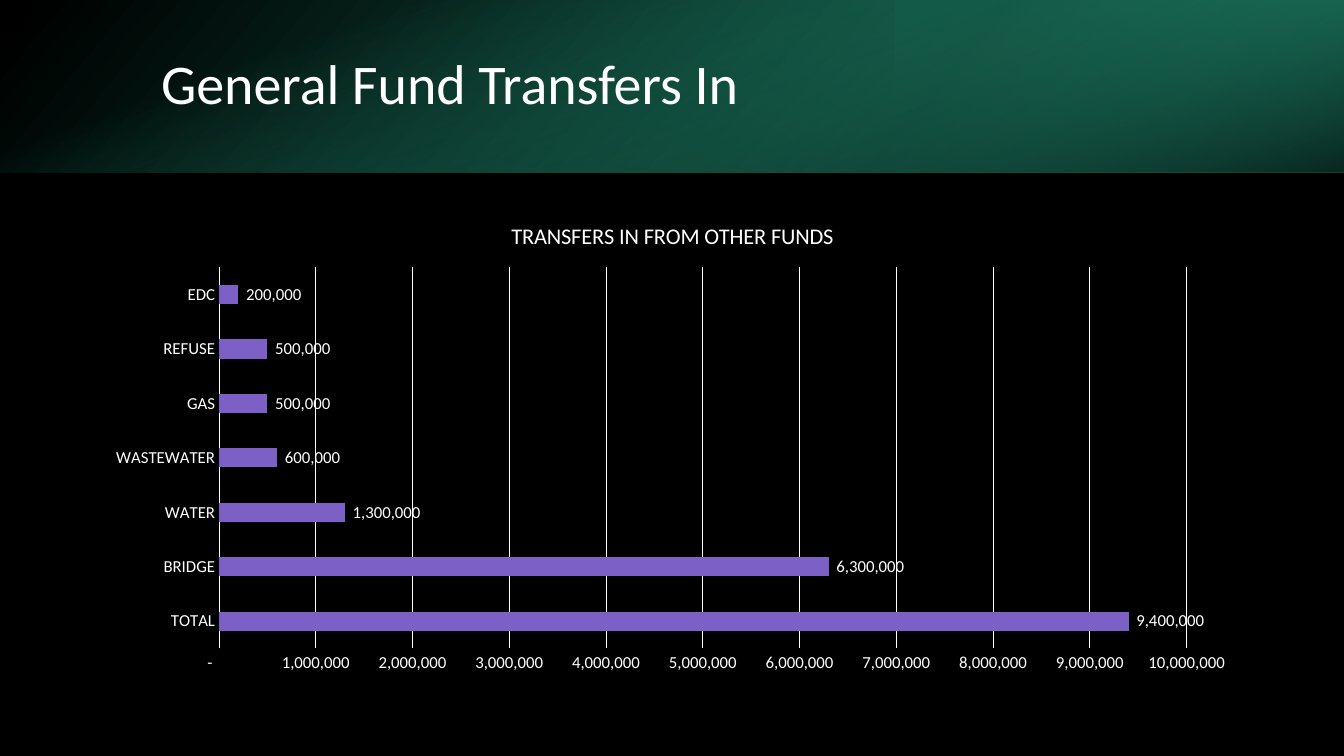
from dataclasses import dataclass

from lxml.etree import SubElement
from pptx import Presentation
from pptx.chart.data import CategoryChartData
from pptx.dml.color import RGBColor
from pptx.enum.chart import XL_CHART_TYPE, XL_LABEL_POSITION, XL_TICK_MARK
from pptx.enum.shapes import MSO_SHAPE
from pptx.enum.text import MSO_ANCHOR, PP_ALIGN
from pptx.oxml.ns import qn
from pptx.util import Emu, Pt


@dataclass(frozen=True)
class Theme:
    font: str = "Calibri"
    back: str = "000000"
    text: str = "FFFFFF"
    bar: str = "7C60C6"
    deep: str = "1F8369"
    dark: str = "155746"
    mint: str = "29AF8C"
    head: int = 40
    sub: int = 16
    note: int = 12
    rule: float = 0.75


THEME = Theme()
WIDE, HIGH = 1344, 756
SCALE = 12192000 / WIDE
NUMBER = '_(* #,##0_);_(* \\(#,##0\\);_(* "-"??_);_('
FUNDS = {
    "TOTAL": 9400000,
    "BRIDGE": 6300000,
    "WATER": 1300000,
    "WASTEWATER": 600000,
    "GAS": 500000,
    "REFUSE": 500000,
    "EDC": 200000,
}


def px(count):
    return Emu(round(count * SCALE))


def rgb(code):
    return RGBColor.from_string(code)


def style(font, size, color=THEME.text):
    font.name = THEME.font
    font.size = Pt(size)
    font.bold = False
    font.color.rgb = rgb(color)


def write(frame, text, size, color=THEME.text, align=None, space=None):
    line = frame.paragraphs[0]
    line.alignment = align
    line.line_spacing = space
    run = line.add_run()
    run.text = text
    style(run.font, size, color)


def rule(line):
    line.color.rgb = rgb(THEME.text)
    line.width = Pt(THEME.rule)


def shade(slide, box, stops, angle, turn=0, flip=False):
    """Add a gradient panel; each stop is (place, color, opacity) in percent."""
    x, y, w, h = box
    if turn == 90:
        x, y, w, h = x + (w - h) / 2, y + (h - w) / 2, h, w
    panel = slide.shapes.add_shape(MSO_SHAPE.RECTANGLE, px(x), px(y), px(w), px(h))
    panel.rotation = turn
    panel.shadow.inherit = False
    panel.line.fill.background()
    props = panel.element.spPr
    if flip:
        props.find(qn("a:xfrm")).set("flipH", "1")
    fill = SubElement(props, qn("a:gradFill"), rotWithShape="1")
    props.find(qn("a:prstGeom")).addnext(fill)
    group = SubElement(fill, qn("a:gsLst"))
    for place, color, alpha in stops:
        stop = SubElement(group, qn("a:gs"), pos=str(place * 1000))
        tint = SubElement(stop, qn("a:srgbClr"), val=color)
        SubElement(tint, qn("a:alpha"), val=str(alpha * 1000))
    SubElement(fill, qn("a:lin"), ang=str(angle * 60000), scaled="0")


def header(slide, box):
    x, y, w, h = box
    # Layered gradients
    shade(slide, box, [(0, THEME.back, 96), (100, THEME.deep, 100)], 140, flip=True)
    third = w // 3
    shade(slide, (x + w - third, y, third, h),
          [(19, THEME.dark, 68), (100, THEME.mint, 79)], 320, turn=180, flip=True)
    shade(slide, box, [(23, THEME.mint, 0), (99, THEME.back, 74)], 340, turn=90)

    # Title, raised above the gradients
    title = slide.shapes.title
    title.left, title.top = px(x + 151), px(y + 38)
    title.width, title.height = px(1107), px(97)
    title.text_frame.vertical_anchor = MSO_ANCHOR.MIDDLE
    title.text_frame.word_wrap = True
    write(title.text_frame, "General Fund Transfers In", THEME.head,
          align=PP_ALIGN.LEFT, space=0.9)
    slide.shapes.element.append(title.element)


def graph(slide, box):
    data = CategoryChartData(number_format="#,##0")
    data.categories = list(FUNDS)
    data.add_series("Series 1", list(FUNDS.values()))
    chart = slide.shapes.add_chart(
        XL_CHART_TYPE.BAR_CLUSTERED, *map(px, box), data).chart
    style(chart.font, THEME.note)
    chart.has_legend = False
    chart.has_title = True
    write(chart.chart_title.text_frame, "TRANSFERS IN FROM OTHER FUNDS", THEME.sub)
    chart.chart_title.include_in_layout = False

    # Axes
    names, values = chart.category_axis, chart.value_axis
    for axis in (names, values):
        axis.major_tick_mark = axis.minor_tick_mark = XL_TICK_MARK.NONE
        style(axis.tick_labels.font, THEME.note)
    rule(names.format.line)
    values.format.line.fill.background()
    values.minimum_scale, values.maximum_scale = 0, 10000000
    values.major_unit = 1000000
    values.has_major_gridlines = True
    rule(values.major_gridlines.format.line)

    # Bars and their labels
    plot = chart.plots[0]
    plot.gap_width = 182
    plot.vary_by_categories = False
    fill = plot.series[0].format.fill
    fill.solid()
    fill.fore_color.rgb = rgb(THEME.bar)
    plot.has_data_labels = True
    labels = plot.data_labels
    labels.show_value = True
    labels.position = XL_LABEL_POSITION.OUTSIDE_END
    style(labels.font, THEME.note)
    for part in (labels, values.tick_labels):
        part.number_format = NUMBER
        part.number_format_is_linked = False


def main():
    deck = Presentation()
    deck.slide_width, deck.slide_height = px(WIDE), px(HIGH)
    slide = deck.slides.add_slide(deck.slide_layouts[5])
    slide.background.fill.solid()
    slide.background.fill.fore_color.rgb = rgb(THEME.back)
    header(slide, (0, 0, WIDE, 173))
    graph(slide, (93, 202, 1159, 480))
    deck.save("out.pptx")


if __name__ == "__main__":
    main()
